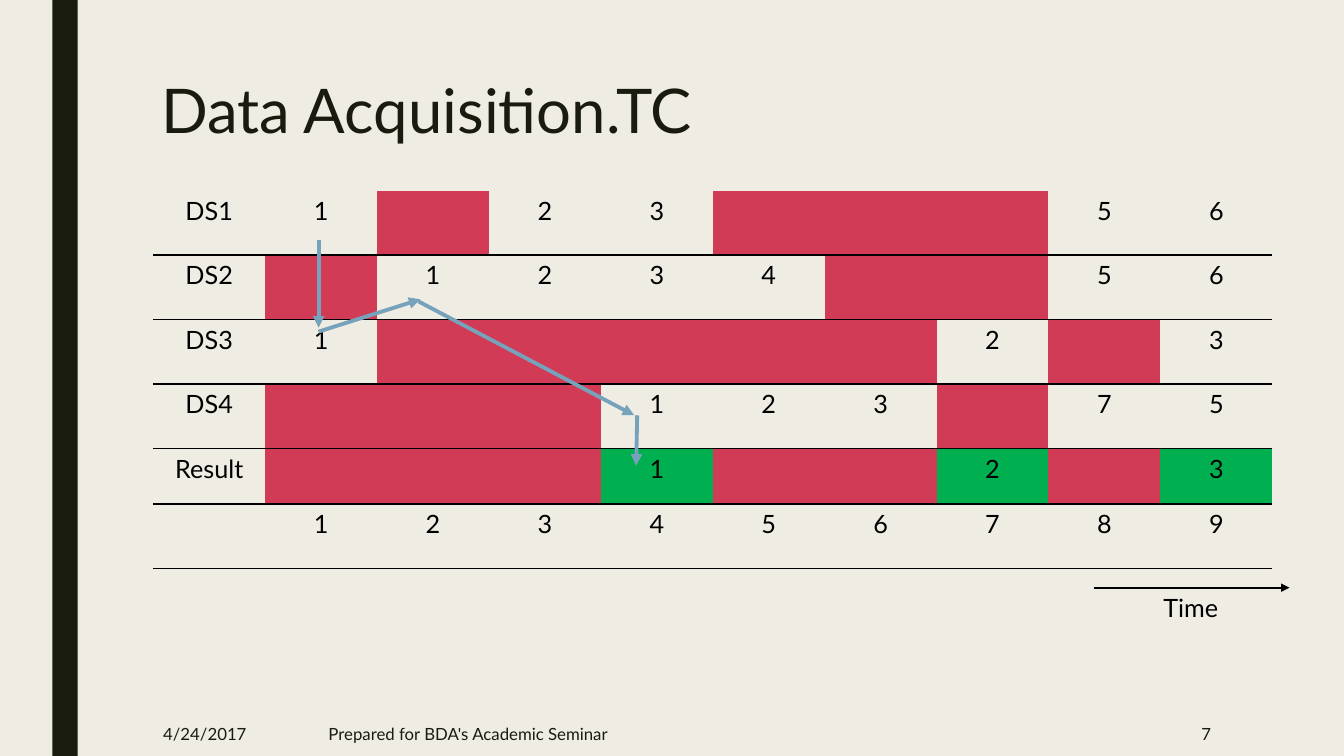
from lxml.etree import SubElement
from pptx import Presentation
from pptx.dml.color import RGBColor
from pptx.enum.shapes import MSO_CONNECTOR, MSO_SHAPE
from pptx.enum.text import MSO_ANCHOR as ANCHOR, PP_ALIGN as ALIGN
from pptx.oxml import parse_xml
from pptx.oxml.ns import nsdecls, qn
from pptx.util import Inches, Pt

INK, BLACK, RED, GREEN, BLUE = "191B0E", "000000", "D13B56", "00B050", "77A2BB"
rgb = RGBColor.from_string


def add_text(text, x, y, w, h, size, color=INK, anchor=ANCHOR.MIDDLE, align=ALIGN.LEFT):
    tf = s.shapes.add_textbox(Inches(x), Inches(y), Inches(w), Inches(h)).text_frame
    tf.word_wrap = True
    tf.vertical_anchor = anchor
    p = tf.paragraphs[0]
    p.text = text
    p.alignment = align
    f = p.runs[0].font
    f.name, f.size, f.color.rgb = "Lato", Pt(size), rgb(color)
    return p


def add_arrow(x1, y1, x2, y2, color, width):
    c = s.shapes.add_connector(MSO_CONNECTOR.STRAIGHT, Inches(x1), Inches(y1), Inches(x2), Inches(y2))
    c.line.color.rgb = rgb(color)
    c.line.width = Pt(width)
    SubElement(c.line._get_or_add_ln(), qn("a:tailEnd"), type="triangle")
    SubElement(c._element.spPr, qn("a:effectLst"))


prs = Presentation()
prs.slide_width, prs.slide_height = Inches(13.33), Inches(7.5)
s = prs.slides.add_slide(prs.slide_layouts[6])
s.background.fill.solid()
s.background.fill.fore_color.rgb = rgb("EFEDE3")

bar = s.shapes.add_shape(MSO_SHAPE.RECTANGLE, Inches(0.52), 0, Inches(0.25), Inches(7.5))
bar.shadow.inherit = False
bar.fill.solid()
bar.fill.fore_color.rgb = rgb(INK)
bar.line.fill.background()

title = add_text("Data Acquisition.TC", 1.5, 0.75, 10.5, 1.62, 44, anchor=ANCHOR.TOP)
title.line_spacing = 0.89
add_text("4/24/2017", 1.52, 7.06, 1.32, 0.44, 12)
add_text("Prepared for BDA's Academic Seminar", 3.16, 7.06, 6.87, 0.44, 12)
add_text("7", 10.36, 7.06, 1.75, 0.44, 12, align=ALIGN.RIGHT)

GAP = "x"
rows = [
    ["DS1", *"1x23xxx56"],
    ["DS2", *"x1234xx56"],
    ["DS3", *"1xxxxx2x3"],
    ["DS4", *"xxx123x75"],
    ["Result", *"xxx1xx2x3"],
    ["", *"123456789"],
]
heights = [0.64, 0.64, 0.64, 0.64, 0.55, 0.64]
frame = s.shapes.add_table(len(rows), len(rows[0]), Inches(1.52), Inches(1.89), Inches(11.11), Inches(3.75))
table = frame.table
table.first_row = table.horz_banding = False
style = next(frame._element.iter(qn("a:tableStyleId")))
style.text = "{2D5ABB26-0587-4C30-8999-92F81FD0307C}"
for col in table.columns:
    col.width = Inches(1.11)
for i, row in enumerate(rows):
    table.rows[i].height = Inches(heights[i])
    for j, value in enumerate(row):
        cell = table.cell(i, j)
        p = cell.text_frame.paragraphs[0]
        p.text = "" if value == GAP else value
        p.alignment = ALIGN.CENTER
        p.font.size = Pt(18)
        for r in p.runs:
            r.font.name, r.font.size, r.font.color.rgb = "Lato", Pt(18), rgb(BLACK)
        cell._tc.get_or_add_tcPr().append(parse_xml(
            f'<a:lnB {nsdecls("a")} w="12700"><a:solidFill><a:srgbClr val="{BLACK}"/></a:solidFill></a:lnB>'))
        if value == GAP or (row[0] == "Result" and j > 0):
            cell.fill.solid()
            cell.fill.fore_color.rgb = rgb(RED if value == GAP else GREEN)
        else:
            cell.fill.background()

add_arrow(10.85, 5.83, 12.79, 5.83, BLACK, 1.5)
add_text("Time", 11.44, 5.83, 0.76, 0.4, 18, BLACK, ANCHOR.TOP)
for points in [
    (3.16, 2.38, 3.16, 3.25),
    (3.16, 3.29, 4.17, 2.97),
    (4.15, 2.99, 6.29, 4.12),
    (6.32, 4.12, 6.31, 4.62),
]:
    add_arrow(*points, BLUE, 2.75)

prs.save("out.pptx")
